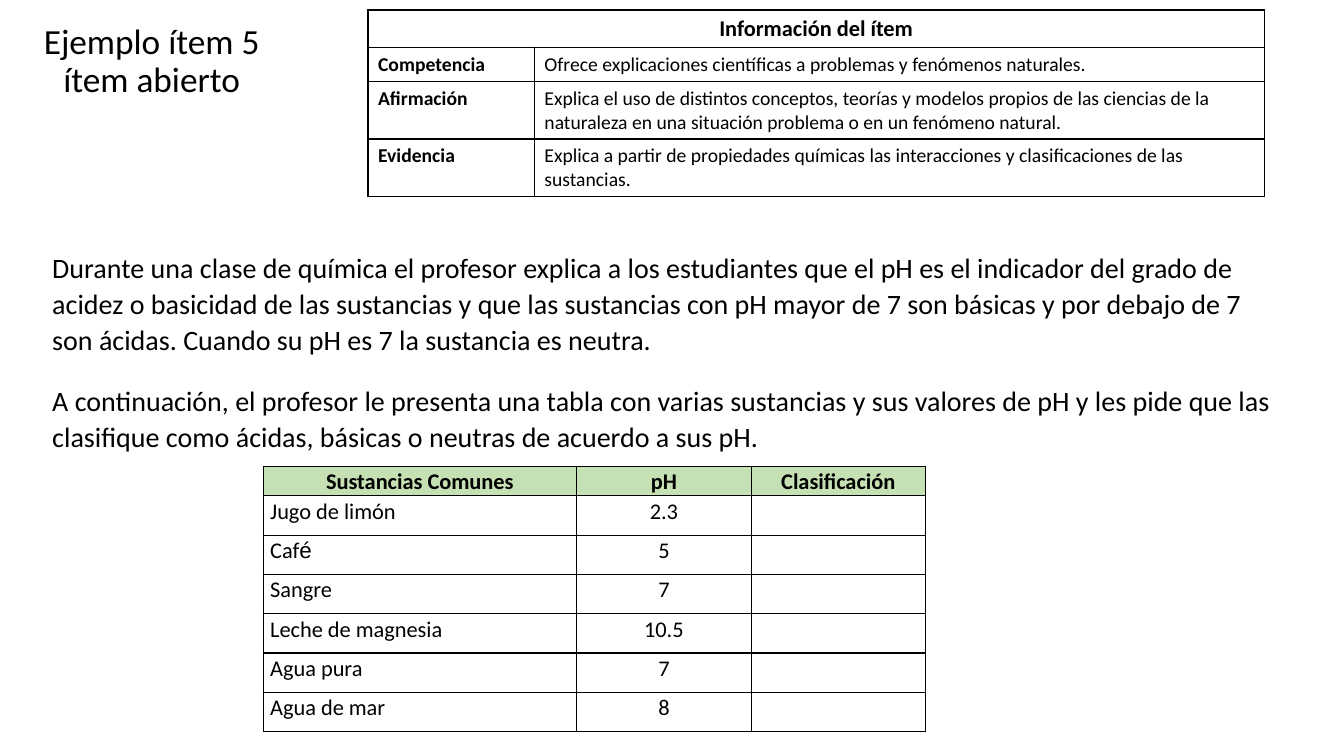
from lxml.etree import SubElement
from pptx import Presentation
from pptx.dml.color import RGBColor
from pptx.enum.text import MSO_ANCHOR, MSO_AUTO_SIZE, PP_ALIGN
from pptx.oxml.ns import qn
from pptx.util import Inches, Pt

BLACK = "000000"
GREEN = "C5E0B3"

ITEM_INFO = [
    ("Información del ítem", ""),
    ("Competencia", "Ofrece explicaciones científicas a problemas y fenómenos naturales."),
    ("Afirmación", "Explica el uso de distintos conceptos, teorías y modelos propios de las "
                   "ciencias de la naturaleza en una situación problema o en un fenómeno natural."),
    ("Evidencia", "Explica a partir de propiedades químicas las interacciones y "
                  "clasificaciones de las sustancias."),
]
SUBSTANCES = [
    ("Sustancias Comunes", "pH", "Clasificación"),
    ("Jugo de limón", "2.3", ""),
    ("Café", "5", ""),
    ("Sangre", "7", ""),
    ("Leche de magnesia", "10.5", ""),
    ("Agua pura", "7", ""),
    ("Agua de mar", "8", ""),
]
STATEMENT = [
    "Durante una clase de química el profesor explica a los estudiantes que el pH es el "
    "indicador del grado de acidez o basicidad de las sustancias y que las sustancias con pH "
    "mayor de 7 son básicas y por debajo de 7 son ácidas. Cuando su pH es 7 la sustancia es neutra.",
    "A continuación, el profesor le presenta una tabla con varias sustancias y sus valores de pH "
    "y les pide que las clasifique como ácidas, básicas o neutras de acuerdo a sus pH.",
]


def color(hex_string):
    return RGBColor.from_string(hex_string)


def write(paragraph, text, size, bold=False, font="Calibri", align=PP_ALIGN.LEFT,
          spacing=1.0, before=0, after=0):
    paragraph.alignment = align
    paragraph.line_spacing = spacing
    paragraph.space_before = Pt(before)
    paragraph.space_after = Pt(after)
    run = paragraph.add_run()
    run.text = text
    run.font.name = font
    run.font.size = Pt(size)
    run.font.bold = bold
    run.font.color.rgb = color(BLACK)


def add_borders(cell):
    properties = cell._tc.get_or_add_tcPr()
    for side in ("lnL", "lnR", "lnT", "lnB"):
        border = SubElement(properties, qn(f"a:{side}"), w=str(Pt(1)))
        fill = SubElement(border, qn("a:solidFill"))
        SubElement(fill, qn("a:srgbClr"), val=BLACK)


def add_grid(slide, left, top, widths, heights):
    table = slide.shapes.add_table(
        len(heights), len(widths), Inches(left), Inches(top),
        Inches(sum(widths)), Inches(sum(heights))).table
    table.first_row = table.horz_banding = False
    for column, width in zip(table.columns, widths):
        column.width = Inches(width)
    for row, height in zip(table.rows, heights):
        row.height = Inches(height)
    for cell in table.iter_cells():
        add_borders(cell)
        cell.fill.background()
    return table


def add_title(slide):
    title = slide.shapes.title
    title.left, title.top = Inches(0.2), Inches(0.24)
    title.width, title.height = Inches(2.61), Inches(0.75)
    frame = title.text_frame
    frame.auto_size = MSO_AUTO_SIZE.NONE
    frame.vertical_anchor = MSO_ANCHOR.MIDDLE
    write(frame.paragraphs[0], "Ejemplo ítem 5 ítem abierto", 25.2,
          align=PP_ALIGN.CENTER, spacing=0.9)


def add_statement(slide):
    frame = slide.shapes.add_textbox(
        Inches(0.42), Inches(2.41), Inches(12.36), Inches(2.2)).text_frame
    frame.word_wrap = True
    for index, text in enumerate(STATEMENT):
        paragraph = frame.add_paragraph() if index else frame.paragraphs[0]
        write(paragraph, text, 20, spacing=1.07, before=10 if index else 0, after=8)


def add_item_info(slide):
    table = add_grid(slide, 3.65, 0.1, [1.65, 7.24], [0.37, 0.34, 0.57, 0.57])
    table.cell(0, 0).merge(table.cell(0, 1))
    for r, row in enumerate(ITEM_INFO):
        for c, text in enumerate(row):
            if text:
                write(table.cell(r, c).text_frame.paragraphs[0], text,
                      14 if r else 16, bold=c == 0,
                      align=PP_ALIGN.LEFT if r else PP_ALIGN.CENTER)


def add_substances(slide):
    table = add_grid(slide, 2.61, 4.63, [3.11, 1.73, 1.73], [0.29] + [0.39] * 6)
    for r, row in enumerate(SUBSTANCES):
        for c, text in enumerate(row):
            cell = table.cell(r, c)
            cell.margin_left = cell.margin_right = Inches(0.07)
            cell.margin_top = cell.margin_bottom = 0
            if r == 0:
                cell.fill.solid()
                cell.fill.fore_color.rgb = color(GREEN)
            paragraph = cell.text_frame.paragraphs[0]
            align = PP_ALIGN.CENTER if r == 0 or c else PP_ALIGN.LEFT
            parts = [("Caf", "Calibri"), ("é", "Arial")] if text == "Café" else [(text, "Calibri")]
            for part, font in parts:
                if part:
                    write(paragraph, part, 16, bold=r == 0, font=font,
                          align=align, spacing=1.07)


def main():
    presentation = Presentation()
    presentation.slide_width, presentation.slide_height = Inches(13.33), Inches(7.5)
    slide = presentation.slides.add_slide(presentation.slide_layouts[5])
    add_statement(slide)
    add_substances(slide)
    add_title(slide)
    add_item_info(slide)
    presentation.save("out.pptx")


if __name__ == "__main__":
    main()
